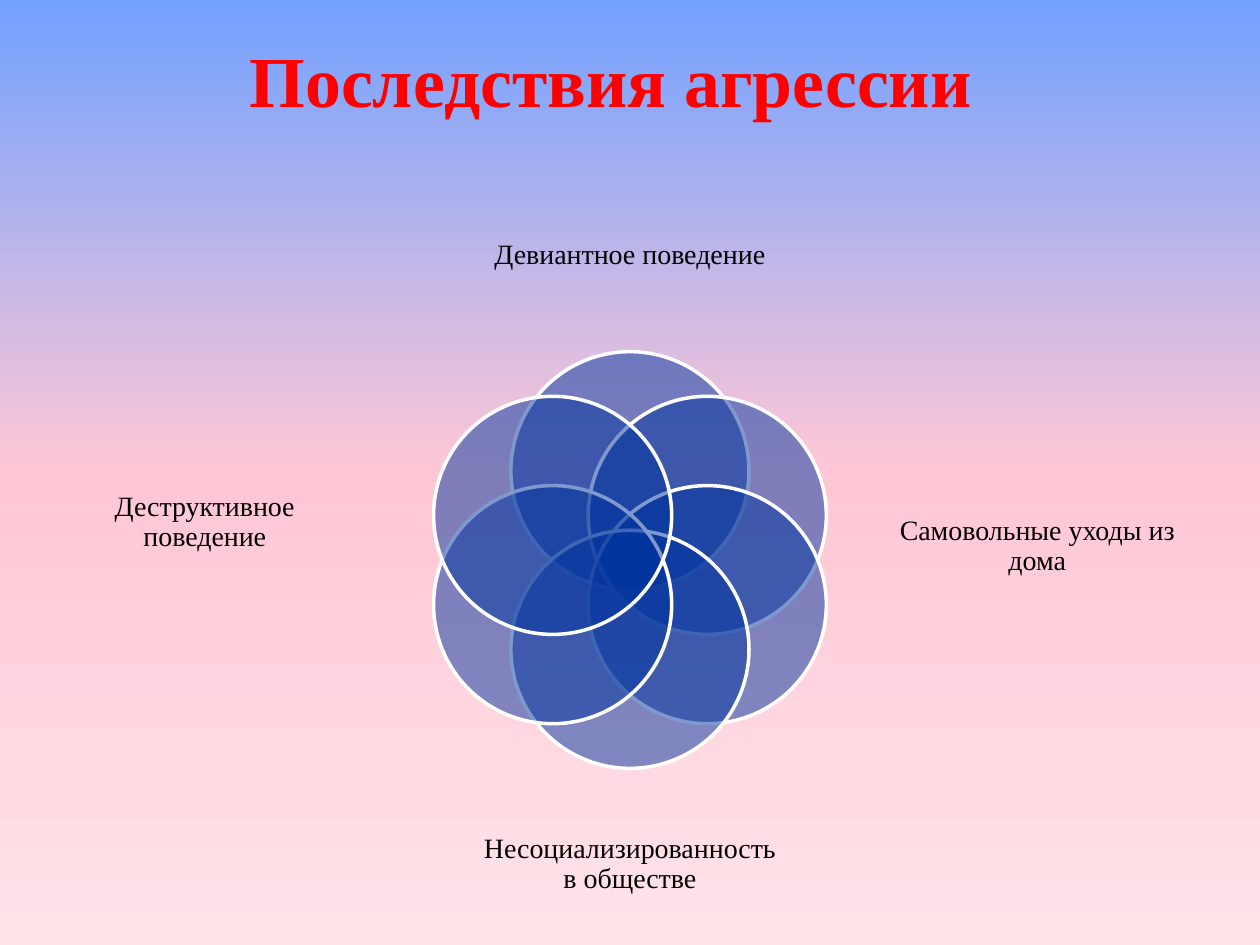
from copy import deepcopy
from math import cos, radians, sin

from lxml.etree import SubElement
from pptx import Presentation
from pptx.dml.color import RGBColor
from pptx.enum.shapes import MSO_SHAPE
from pptx.enum.text import MSO_ANCHOR, PP_ALIGN
from pptx.oxml.ns import qn
from pptx.util import Cm, Pt

RED = RGBColor(0xFF, 0x00, 0x00)
BLACK = RGBColor(0x00, 0x00, 0x00)
WHITE = RGBColor(0xFF, 0xFF, 0xFF)
NAVY = RGBColor(0x00, 0x34, 0x9E)
SKY = RGBColor(0x72, 0xA1, 0xFF)
PINK = RGBColor(0xFF, 0xC7, 0xD6)
PALE_PINK = RGBColor(0xFF, 0xE4, 0xEA)

CENTER_X, CENTER_Y = 12.7, 11.29
RING_RADIUS = 1.8
DIAMETER = 4.8
PETALS = 6

CONSEQUENCES = [
    ("Девиантное поведение", 9.7, 3.53, 6, 3.25),
    ("Деструктивное поведение", 1.3, 8.74, 5.66, 3.58),
    ("Самовольные уходы из дома", 18.08, 9.02, 5.66, 3.99),
    ("Несоциализированность в обществе", 9.7, 15.8, 6, 3.25),
]


class SlideBuilder:
    font = "Times New Roman"

    def __init__(self, slide):
        self.slide = slide

    def background(self, top, middle, bottom):
        fill = self.slide.background.fill
        fill.gradient()
        fill.gradient_angle = 270
        first = self.slide.element.xpath(".//p:bg//a:gs")[0]
        first.addnext(deepcopy(first))
        for stop, color, position in zip(
            fill.gradient_stops, (top, middle, bottom), (0, 0.5, 1)
        ):
            stop.color.rgb = color
            stop.position = position

    def centered_text(self, frame, text, size, color, bold=False):
        frame.word_wrap = True
        frame.vertical_anchor = MSO_ANCHOR.MIDDLE
        paragraph = frame.paragraphs[0]
        paragraph.alignment = PP_ALIGN.CENTER
        run = paragraph.add_run()
        run.text = text
        run.font.name = self.font
        run.font.size = Pt(size)
        run.font.bold = bold
        run.font.color.rgb = color
        return paragraph

    def title(self, text, left, top, width, height):
        title = self.slide.shapes.title
        title.left, title.top = Cm(left), Cm(top)
        title.width, title.height = Cm(width), Cm(height)
        self.centered_text(title.text_frame, text, 41, RED, bold=True)

    def label(self, text, left, top, width, height):
        label = self.slide.shapes.add_textbox(
            Cm(left), Cm(top), Cm(width), Cm(height)
        )
        frame = label.text_frame
        frame.margin_left = frame.margin_right = 0
        frame.margin_top = frame.margin_bottom = 0
        self.centered_text(frame, text, 16, BLACK).line_spacing = 0.9

    def petal(self, angle):
        """Add a half-transparent circle at an angle clockwise from the top."""
        left = CENTER_X + RING_RADIUS * sin(radians(angle)) - DIAMETER / 2
        top = CENTER_Y - RING_RADIUS * cos(radians(angle)) - DIAMETER / 2
        petal = self.slide.shapes.add_shape(
            MSO_SHAPE.OVAL, Cm(left), Cm(top), Cm(DIAMETER), Cm(DIAMETER)
        )
        petal.shadow.inherit = False
        petal.fill.solid()
        petal.fill.fore_color.rgb = NAVY
        color = petal.element.xpath("./p:spPr/a:solidFill/a:srgbClr")[0]
        SubElement(color, qn("a:alpha"), val="50000")
        petal.line.color.rgb = WHITE
        petal.line.width = Pt(2)


def main():
    presentation = Presentation()
    presentation.slide_width, presentation.slide_height = Cm(25.4), Cm(19.05)
    title_only = presentation.slide_layouts[5]
    builder = SlideBuilder(presentation.slides.add_slide(title_only))

    builder.background(SKY, PINK, PALE_PINK)
    builder.title("Последствия агрессии", 0.89, 0, 22.86, 3.18)
    for index in range(PETALS):
        builder.petal(index * 360 / PETALS)
    for consequence in CONSEQUENCES:
        builder.label(*consequence)

    presentation.save("out.pptx")


if __name__ == "__main__":
    main()
